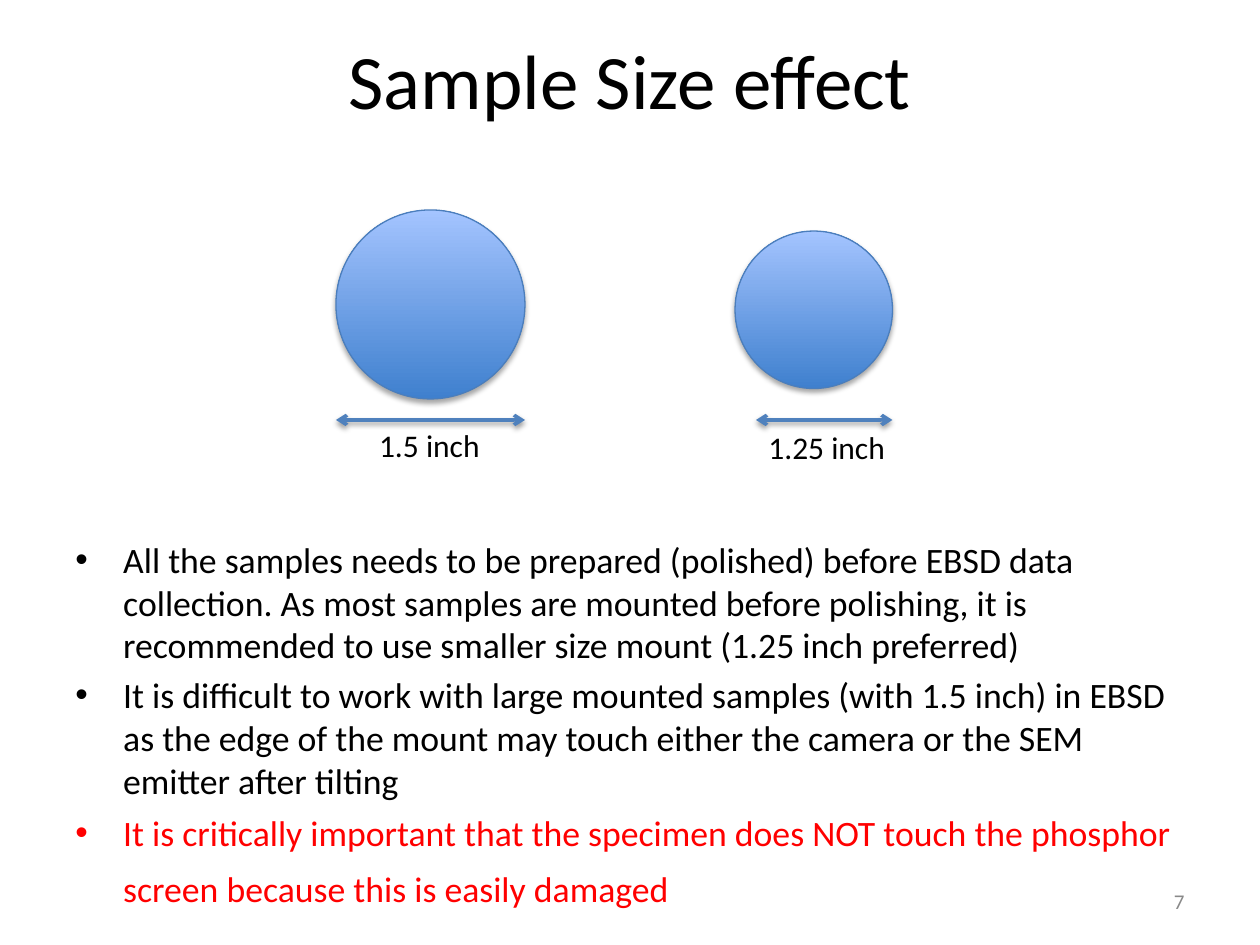
from lxml.etree import SubElement
from pptx import Presentation
from pptx.dml.color import RGBColor
from pptx.enum.shapes import MSO_CONNECTOR, MSO_SHAPE
from pptx.enum.text import MSO_ANCHOR, PP_ALIGN
from pptx.oxml.ns import qn
from pptx.util import Inches, Pt

WIDTH, HEIGHT = Inches(10), Inches(7.5)
COLUMN, ROW = WIDTH / 60, HEIGHT / 45
ADVICE = [
    ("All the samples needs to be prepared (polished) before EBSD data collection. "
     "As most samples are mounted before polishing, it is recommended to use smaller "
     "size mount (1.25 inch preferred)", "000000", 4.1),
    ("It is difficult to work with large mounted samples (with 1.5 inch) in EBSD as the "
     "edge of the mount may touch either the camera or the SEM emitter after tilting",
     "000000", 4.1),
    ("It is critically important that the specimen does NOT touch the phosphor screen "
     "because this is easily damaged", "FF0000", 5.3),
]


def rgb(value):
    return RGBColor.from_string(value)


def cells(left, top, width, height):
    return [round(size) for size in
            (left * COLUMN, top * ROW, width * COLUMN, height * ROW)]


def apply(target, values):
    for name, value in values.items():
        setattr(target, name, value)


def write(paragraph, words, size, color="000000"):
    run = paragraph.add_run()
    run.text = words
    apply(run.font, {"name": "Calibri", "size": Pt(size)})
    run.font.color.rgb = rgb(color)


def add_label(slide, box, words, size, color="000000", wrap=True,
              anchor=MSO_ANCHOR.TOP, align=PP_ALIGN.LEFT):
    frame = slide.shapes.add_textbox(*cells(*box)).text_frame
    apply(frame, {"word_wrap": wrap, "vertical_anchor": anchor})
    frame.paragraphs[0].alignment = align
    write(frame.paragraphs[0], words, size, color)


def add_shadow(element, opacity, distance):
    properties = element.spPr
    for old in properties.findall(qn("a:effectLst")):
        properties.remove(old)
    effects = SubElement(properties, qn("a:effectLst"))
    shadow = SubElement(effects, qn("a:outerShdw"), blurRad=str(Pt(3.1)),
                        dist=str(Pt(distance)), dir="5400000", rotWithShape="0")
    black = SubElement(shadow, qn("a:srgbClr"), val="000000")
    SubElement(black, qn("a:alpha"), val=str(opacity * 1000))


def add_mount(slide, left, top, diameter):
    mount = slide.shapes.add_shape(
        MSO_SHAPE.OVAL, *cells(left, top, diameter, diameter))
    mount.fill.gradient()
    mount.fill.gradient_angle = 90
    for stop, (position, color) in zip(mount.fill.gradient_stops,
                                       [(0, "3F80CE"), (1, "A4C4FF")]):
        stop.position = position
        stop.color.rgb = rgb(color)
    mount.line.color.rgb = rgb("4B7EBC")
    mount.line.width = Pt(0.75)
    add_shadow(mount._element, 35, 1.8)


def add_dimension(slide, left, right, row):
    start_x, y, span, _ = cells(left, row, right - left, 0)
    dimension = slide.shapes.add_connector(
        MSO_CONNECTOR.STRAIGHT, start_x, y, start_x + span, y)
    dimension.line.color.rgb = rgb("4F81BD")
    dimension.line.width = Pt(2)
    outline = dimension.line._get_or_add_ln()
    for end in ("a:headEnd", "a:tailEnd"):
        SubElement(outline, qn(end), type="arrow")
    add_shadow(dimension._element, 38, 1.6)


def add_advice(slide):
    frame = slide.shapes.add_textbox(*cells(3, 25.3, 54, 16.7)).text_frame
    frame.word_wrap = True
    for index, (words, color, gap) in enumerate(ADVICE):
        paragraph = frame.add_paragraph() if index else frame.paragraphs[0]
        paragraph.space_before = Pt(gap)
        write(paragraph, words, 20.4, color)
        layout = paragraph._p.get_or_add_pPr()
        layout.set("marL", str(Inches(0.38)))
        layout.set("indent", str(Inches(-0.38)))
        SubElement(layout, qn("a:buFont"), typeface="Arial")
        SubElement(layout, qn("a:buChar"), char="•")
    write(paragraph, " ", 27.8)


def add_title(slide, words):
    title = slide.shapes.title
    apply(title, dict(zip(("left", "top", "width", "height"), cells(3, 0, 54, 7.5))))
    title.text_frame.vertical_anchor = MSO_ANCHOR.MIDDLE
    heading = title.text_frame.paragraphs[0]
    heading.alignment = PP_ALIGN.CENTER
    write(heading, words, 44)


def main():
    deck = Presentation()
    apply(deck, {"slide_width": WIDTH, "slide_height": HEIGHT})
    slide = deck.slides.add_slide(deck.slide_layouts[5])
    add_title(slide, "Sample Size effect")
    add_advice(slide)
    add_mount(slide, 16, 10, 9)
    add_mount(slide, 35, 11, 7.5)
    add_dimension(slide, 16, 25, 20)
    add_dimension(slide, 36, 42.5, 20)
    add_label(slide, (36, 20.1, 6.84, 2.4), "1.25 inch", 18, wrap=False)
    add_label(slide, (17.46, 20, 6.06, 2.4), "1.5 inch", 18, wrap=False)
    add_label(slide, (43, 41.7, 14, 2.4), "7", 12, "898989",
              anchor=MSO_ANCHOR.MIDDLE, align=PP_ALIGN.RIGHT)
    deck.save("out.pptx")


if __name__ == "__main__":
    main()
